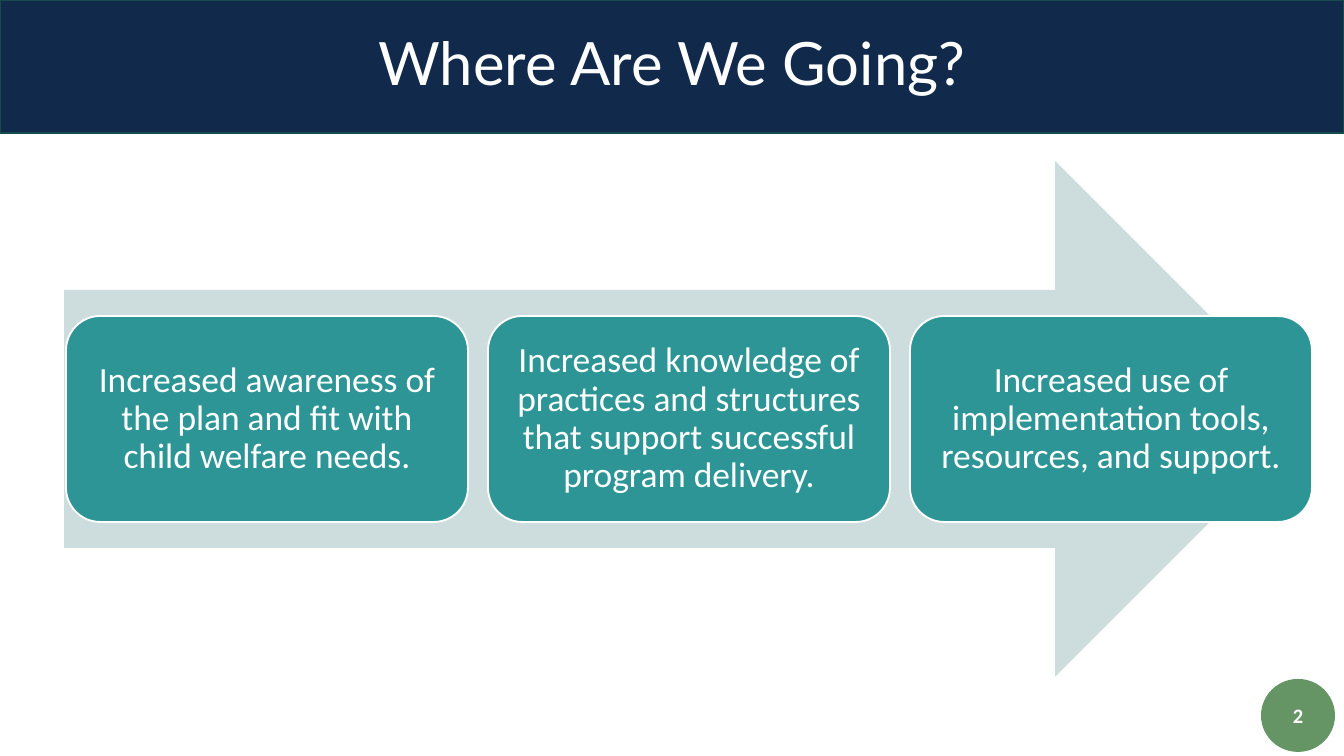
import dataclasses
import typing

import pptx
import pptx.dml.color
import pptx.enum.shapes
import pptx.enum.text
import pptx.util

RGBColor = pptx.dml.color.RGBColor
SHAPE = pptx.enum.shapes.MSO_SHAPE

NAVY = RGBColor(0x11, 0x29, 0x4B)
PINE = RGBColor(0x17, 0x4A, 0x4B)
GREEN = RGBColor(0x65, 0x94, 0x65)
MIST = RGBColor(0xCD, 0xDD, 0xDD)
TEAL = RGBColor(0x2D, 0x95, 0x96)
WHITE = RGBColor(0xFF, 0xFF, 0xFF)

WIDE, HIGH = 1344, 756
SCALE = pptx.util.Inches(10) / WIDE


@dataclasses.dataclass
class Label:
    text: str
    size: int
    font: str = "Calibri"
    bold: bool = False
    inset: int = 11
    space: float = 0.9


@dataclasses.dataclass
class Block:
    kind: SHAPE
    left: int
    top: int
    width: int
    height: int
    fill: RGBColor
    line: typing.Optional[RGBColor] = None
    label: typing.Optional[Label] = None


def px(count: int) -> pptx.util.Emu:
    return pptx.util.Emu(round(count * SCALE))


def write(shape, label: Label) -> None:
    frame = shape.text_frame
    frame.word_wrap = True
    frame.vertical_anchor = pptx.enum.text.MSO_ANCHOR.MIDDLE
    frame.margin_left = frame.margin_right = px(label.inset)
    frame.margin_top = frame.margin_bottom = px(label.inset)
    para = frame.paragraphs[0]
    para.alignment = pptx.enum.text.PP_ALIGN.CENTER
    para.line_spacing = label.space
    run = para.add_run()
    run.text = label.text
    run.font.name = label.font
    run.font.size = pptx.util.Pt(label.size)
    run.font.bold = label.bold
    run.font.color.rgb = WHITE


def draw(slide, block: Block) -> None:
    shape = slide.shapes.add_shape(
        block.kind, px(block.left), px(block.top), px(block.width), px(block.height)
    )
    shape.shadow.inherit = False
    shape.fill.solid()
    shape.fill.fore_color.rgb = block.fill
    if block.line is None:
        shape.line.fill.background()
    else:
        shape.line.color.rgb = block.line
        shape.line.width = pptx.util.Pt(1)
    if block.label:
        write(shape, block.label)


GOALS = [
    "Increased awareness of the plan and fit with child welfare needs.",
    "Increased knowledge of practices and structures that support successful program delivery.",
    "Increased use of implementation tools, resources, and support.",
]
LEFT, STEP = 66, 422


def main() -> None:
    deck = pptx.Presentation()
    deck.slide_width, deck.slide_height = px(WIDE), px(HIGH)
    slide = deck.slides.add_slide(deck.slide_layouts[6])

    title = Label("Where Are We Going?", 32, font="Lato")
    page = Label("2", 11, bold=True, inset=6, space=1.0)
    blocks = [
        Block(SHAPE.RECTANGLE, 0, 0, WIDE, 133, NAVY, PINE, title),
        Block(SHAPE.OVAL, 1261, 679, 74, 73, GREEN, label=page),
        Block(SHAPE.RIGHT_ARROW, 64, 161, 1249, 516, MIST),
    ]
    for spot, goal in enumerate(GOALS):
        blocks.append(
            Block(SHAPE.ROUNDED_RECTANGLE, LEFT + spot * STEP, 316, 402, 206,
                  TEAL, WHITE, Label(goal, 19))
        )
    for block in blocks:
        draw(slide, block)
    deck.save("out.pptx")


if __name__ == "__main__":
    main()
